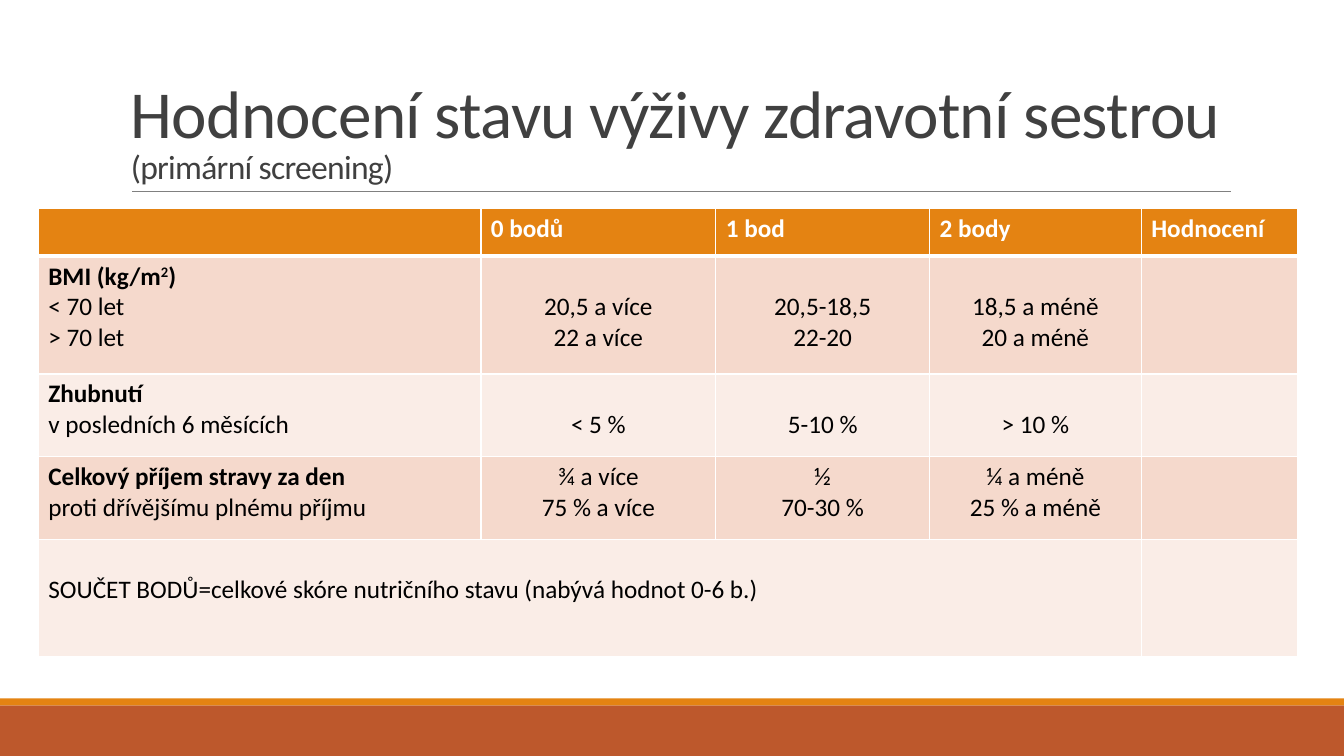
from lxml import etree
from pptx import Presentation
from pptx import util as u
from pptx.dml.color import RGBColor
from pptx.enum import shapes, text
from pptx.oxml.ns import qn

WIDE, HIGH = 13.33, 7.5
FONT = "Calibri"
HUES = {
    "band": "BD582C", "head": "E48312", "rule": "808080", "title": "404040",
    "dark": "F5D9CC", "light": "FAEDE7", "white": "FFFFFF", "ink": "000000",
}
COLS = [4.39, 2.33, 2.12, 2.1, 1.55]
ROWS = [0.47, 1.17, 0.82, 0.82, 1.17]
PAD = 0.05      # top margin of a cell
LINE = 0.305    # one line of 18 pt text
HEADS = ["", "0 bodů", "1 bod", "2 body", "Hodnocení"]
# Each body row: lines the scores are moved down, then the cells
BODY = [
    (1, ["BMI (kg/m2)\n< 70 let\n> 70 let", "20,5 a více\n22 a více",
         "20,5-18,5\n22-20", "18,5 a méně\n20 a méně", ""]),
    (1, ["Zhubnutí\nv posledních 6 měsících", "< 5 %", "5-10 %", "> 10 %", ""]),
    (0, ["Celkový příjem stravy za den\nproti dřívějšímu plnému příjmu",
         "¾ a více\n75 % a více", "½\n70-30 %", "¼ a méně\n25 % a méně", ""]),
]
TOTAL = "SOUČET BODŮ=celkové skóre nutričního stavu (nabývá hodnot 0-6 b.)"


def hue(name):
    return RGBColor.from_string(HUES[name])


def inches(box):
    return [u.Inches(v) for v in box]


def style(run, size, color, bold=False):
    run.font.name, run.font.size, run.font.bold = FONT, u.Pt(size), bold
    run.font.color.rgb = hue(color)


def footer(slide, box):
    """Two bands: a thin one above a thick one."""
    left, top, wide, high = box
    thin = high * 0.12
    for y, h, name in ((top + thin, high - thin, "band"), (top, thin, "head")):
        bar = slide.shapes.add_shape(shapes.MSO_SHAPE.RECTANGLE,
                                     *inches((left, y, wide, h)))
        bar.shadow.inherit = False
        bar.fill.solid()
        bar.fill.fore_color.rgb = hue(name)
        bar.line.fill.background()


def title(slide, box):
    """Heading with a smaller second part and a rule along the bottom."""
    left, top, wide, high = box
    base = top + high
    rule = slide.shapes.add_connector(
        shapes.MSO_CONNECTOR.STRAIGHT,
        *inches((left + wide * 0.01, base, left + wide * 1.001, base)))
    rule.line.color.rgb = hue("rule")
    rule.line.width = u.Pt(0.5)
    etree.SubElement(rule._element.spPr, qn("a:effectLst"))

    frame = slide.shapes.add_textbox(*inches(box)).text_frame
    frame.word_wrap = True
    frame.vertical_anchor = text.MSO_ANCHOR.BOTTOM
    par = frame.paragraphs[0]
    par.line_spacing = 0.85
    for words, size in (("Hodnocení stavu výživy zdravotní sestrou ", 48),
                        ("(primární screening)", 24)):
        run = par.add_run()
        run.text = words
        style(run, size, "title")
        run._r.get_or_add_rPr().set("spc", "-50")


def edges(cell, top, bottom):
    """White borders; top and bottom widths in points."""
    props = cell._tc.get_or_add_tcPr()
    for tag, width in (("lnL", 1), ("lnR", 1), ("lnT", top), ("lnB", bottom)):
        line = etree.SubElement(props, qn("a:" + tag), w=str(u.Pt(width)))
        fill = etree.SubElement(line, qn("a:solidFill"))
        etree.SubElement(fill, qn("a:srgbClr"), val=HUES["white"])


def write(cell, words, color="ink", bold=False, center=False, down=0):
    """Fill a cell; bold applies to its first line only."""
    cell.margin_top = u.Inches(PAD + down * LINE)
    cell.text_frame.text = words
    for i, par in enumerate(cell.text_frame.paragraphs):
        if center:
            par.alignment = text.PP_ALIGN.CENTER
        for run in par.runs:
            style(run, 18, color, bold and i == 0)


def square(par):
    """Split the first line so that its 2 is raised."""
    start, end = par.text.split("2")
    par.runs[0].text = start
    for part in ("2", end):
        run = par.add_run()
        run.text = part
        style(run, 18, "ink", True)
        if part == "2":
            run._r.get_or_add_rPr().set("baseline", "30000")


def scores(slide, box):
    """Screening table, with columns and rows scaled to the box."""
    grid = slide.shapes.add_table(len(ROWS), len(COLS), *inches(box)).table
    for col, wide in zip(grid.columns, COLS):
        col.width = u.Inches(wide * box[2] / sum(COLS))
    for row, high in zip(grid.rows, ROWS):
        row.height = u.Inches(high * box[3] / sum(ROWS))

    # Fills and borders
    for r in range(len(ROWS)):
        name = "head" if r == 0 else "dark" if r % 2 else "light"
        for c in range(len(COLS)):
            cell = grid.cell(r, c)
            edges(cell, 3 if r == 1 else 1, 3 if r == 0 else 1)
            cell.fill.solid()
            cell.fill.fore_color.rgb = hue(name)

    # Wording
    for c, words in enumerate(HEADS):
        write(grid.cell(0, c), words, "white", True)
    for r, (down, row) in enumerate(BODY, 1):
        for c, words in enumerate(row):
            first = c == 0
            write(grid.cell(r, c), words, bold=first, center=not first,
                  down=0 if first else down)
    square(grid.cell(1, 0).text_frame.paragraphs[0])

    # Total row
    last = len(ROWS) - 1
    grid.cell(last, 0).merge(grid.cell(last, 3))
    write(grid.cell(last, 0), TOTAL, down=1)


def main():
    deck = Presentation()
    deck.slide_width, deck.slide_height = inches((WIDE, HIGH))
    slide = deck.slides.add_slide(deck.slide_layouts[6])
    footer(slide, (0, HIGH * 0.924, WIDE, HIGH * 0.076))
    title(slide, (WIDE * 0.09, 0.31, 11, 1.59))
    scores(slide, (0.38, 2.07, sum(COLS), sum(ROWS)))
    deck.save("out.pptx")


if __name__ == "__main__":
    main()
